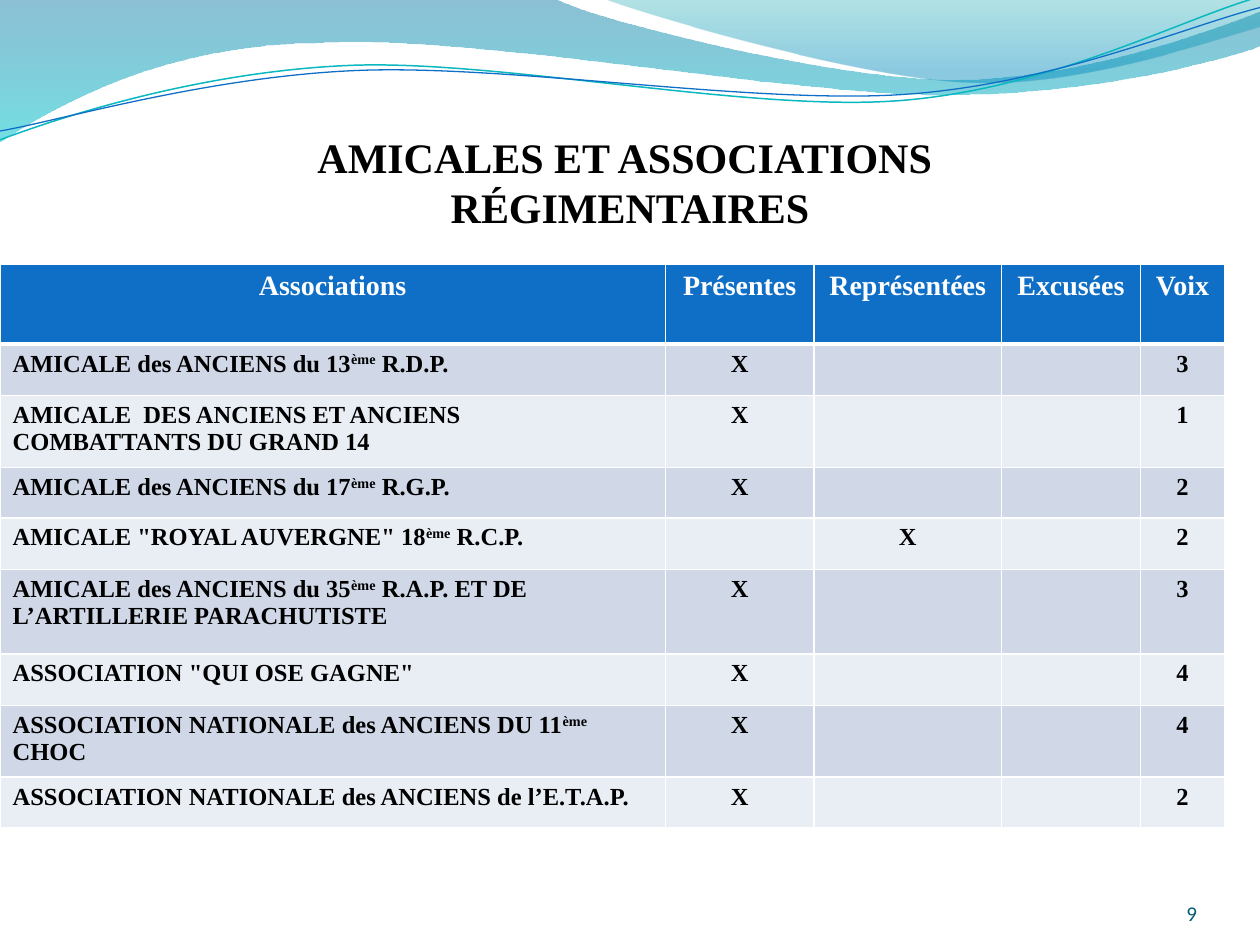
from dataclasses import dataclass

import pptx
import pptx.dml.color
import pptx.enum.text
import pptx.oxml
import pptx.oxml.ns
import pptx.util

EMU_PER_PX = 9144  # 100 px to the inch
SERIF = "Times New Roman"
COLORS = {
    "white": "FFFFFF", "black": "000000", "header": "0F6FC6",
    "odd_row": "D0D8E8", "even_row": "E9EDF4", "page_number": "045C75",
    "teal_line": "0AB8BF", "blue_line": "0F6FC6",
    "deep_blue": "0074A1", "aqua": "00C6CF", "teal": "00A1A9", "sky": "008BBF",
}
Point = tuple[int, int]
Curve = tuple[Point, Point, Point]
ALIGN = pptx.enum.text.PP_ALIGN


@dataclass
class GradientStop:
    position: float
    color: str
    opacity: int


@dataclass
class Wave:
    """Outline of straight points and Bézier curves, filled or stroked."""
    segments: list[Point | Curve]
    gradient: tuple[GradientStop, GradientStop] | None = None
    line_color: str = ""
    line_width: float = 0


@dataclass
class Association:
    name: str
    status: str
    votes: int


WAVES = [
    Wave([(0, -1), (440, -1), ((476, 17), (664, 63), (758, 63)),
          ((853, 63), (958, 26), (1000, 9)), (1001, 36),
          ((983, 44), (870, 76), (746, 75)), ((622, 75), (382, 28), (257, 34)),
          ((129, 35), (46, 83), (-1, 113))],
         gradient=(GradientStop(0, "deep_blue", 45), GradientStop(1, "aqua", 55))),
    Wave([(479, -1), ((509, 11), (682, 62), (769, 65)),
          ((856, 69), (961, 32), (1000, 21)), (1000, 0)],
         gradient=(GradientStop(0, "teal", 30), GradientStop(0.8, "sky", 45))),
    Wave([(0, 111), ((48, 93), (158, 57), (277, 52)),
          ((395, 47), (593, 89), (713, 80)), ((833, 71), (938, 15), (998, -2))],
         line_color="teal_line", line_width=0.85),
    Wave([(0, 104), ((47, 96), (164, 61), (283, 56)),
          ((403, 51), (597, 83), (717, 75)), ((836, 67), (941, 21), (1000, 6))],
         line_color="blue_line", line_width=0.75),
]
HEADERS = ["Associations", "Présentes", "Représentées", "Excusées", "Voix"]
COLUMN_WIDTHS = [528, 118, 149, 110, 67]
ROW_HEIGHTS = [63, 41, 57, 40, 41, 67, 41, 57, 40]
ASSOCIATIONS = [
    Association("AMICALE des ANCIENS du 13ème R.D.P.", "Présentes", 3),
    Association("AMICALE  DES ANCIENS ET ANCIENS COMBATTANTS DU GRAND 14", "Présentes", 1),
    Association("AMICALE des ANCIENS du 17ème R.G.P.", "Présentes", 2),
    Association('AMICALE "ROYAL AUVERGNE" 18ème R.C.P.', "Représentées", 2),
    Association("AMICALE des ANCIENS du 35ème R.A.P. ET DE L’ARTILLERIE PARACHUTISTE",
                "Présentes", 3),
    Association('ASSOCIATION "QUI OSE GAGNE"', "Présentes", 4),
    Association("ASSOCIATION NATIONALE des ANCIENS DU 11ème CHOC", "Présentes", 4),
    Association("ASSOCIATION NATIONALE des ANCIENS de l’E.T.A.P.", "Présentes", 2),
]


def px(length: int) -> int:
    return length * EMU_PER_PX


def rgb(name: str) -> pptx.dml.color.RGBColor:
    return pptx.dml.color.RGBColor.from_string(COLORS[name])


def format_run(run, size: int, color: str, font: str = SERIF, bold: bool = True) -> None:
    run.font.size = pptx.util.Pt(size)
    run.font.name = font
    run.font.bold = bold
    run.font.color.rgb = rgb(color)


def bend_segments(shape, segments: list[Point | Curve]) -> None:
    """Join the three straight steps of each curve into one Bézier curve."""
    steps = iter(list(shape._element.iter(pptx.oxml.ns.qn("a:lnTo"))))
    for segment in segments:
        first = next(steps)
        if len(segment) == 2:
            continue
        curve = pptx.oxml.parse_xml(f'<a:cubicBezTo {pptx.oxml.ns.nsdecls("a")}/>')
        first.addprevious(curve)
        for step in (first, next(steps), next(steps)):
            curve.append(step[0])
            step.getparent().remove(step)


def draw_wave(slide, wave: Wave) -> None:
    start, *segments = wave.segments
    vertices = []
    for segment in segments:
        points = segment if len(segment) == 3 else [segment]
        vertices += [(px(x), px(y)) for x, y in points]
    builder = slide.shapes.build_freeform(px(start[0]), px(start[1]), scale=1.0)
    builder.add_line_segments(vertices, close=wave.gradient is not None)
    shape = builder.convert_to_shape()
    bend_segments(shape, segments)
    shape.shadow.inherit = False
    if wave.gradient is None:
        shape.fill.background()
        shape.line.color.rgb = rgb(wave.line_color)
        shape.line.width = pptx.util.Pt(wave.line_width)
        return
    shape.line.fill.background()
    shape.fill.gradient()
    shape.fill.gradient_angle = 270
    for stop, wanted in zip(shape.fill.gradient_stops, wave.gradient):
        stop.position = wanted.position
        stop.color.rgb = rgb(wanted.color)
    color_elements = shape.fill._xPr.iter(pptx.oxml.ns.qn("a:srgbClr"))
    for element, wanted in zip(list(color_elements), wave.gradient):
        element.append(pptx.oxml.parse_xml(
            f'<a:alpha {pptx.oxml.ns.nsdecls("a")} val="{wanted.opacity * 1000}"/>'))


def style_cell(cell, fill: str, top: int, bottom: int) -> None:
    """Draw white borders of the given point widths, then the fill."""
    properties = cell._tc.get_or_add_tcPr()
    for side, width in (("L", 1), ("R", 1), ("T", top), ("B", bottom)):
        properties.append(pptx.oxml.parse_xml(
            f'<a:ln{side} {pptx.oxml.ns.nsdecls("a")} w="{pptx.util.Pt(width)}">'
            f'<a:solidFill><a:srgbClr val="{COLORS["white"]}"/></a:solidFill>'
            f'</a:ln{side}>'))
    cell.fill.solid()
    cell.fill.fore_color.rgb = rgb(fill)


def write_cell(cell, text: str, size: int, color: str, centered: bool) -> None:
    """Write the text, raising an ordinal ending."""
    paragraph = cell.text_frame.paragraphs[0]
    paragraph.alignment = ALIGN.CENTER if centered else ALIGN.LEFT
    for part in filter(None, text.partition("ème")):
        run = paragraph.add_run()
        run.text = part
        format_run(run, size, color)
        if part == "ème":
            run._r.get_or_add_rPr().set("baseline", "30000")
    if not text:  # keeps an empty cell from stretching its row
        paragraph._p.append(pptx.oxml.parse_xml(
            f'<a:endParaRPr {pptx.oxml.ns.nsdecls("a")} sz="{size * 100}"/>'))


def draw_table(slide) -> None:
    rows = [HEADERS]
    for association in ASSOCIATIONS:
        marks = ["X" if header == association.status else "" for header in HEADERS[1:-1]]
        rows.append([association.name, *marks, str(association.votes)])
    table = slide.shapes.add_table(len(rows), len(HEADERS), 0, px(210),
                                   px(sum(COLUMN_WIDTHS)), px(sum(ROW_HEIGHTS))).table
    table.first_row = table.horz_banding = False
    for column, width in zip(table.columns, COLUMN_WIDTHS):
        column.width = px(width)
    for row_index, texts in enumerate(rows):
        table.rows[row_index].height = px(ROW_HEIGHTS[row_index])
        is_header = row_index == 0
        fill = "header" if is_header else "odd_row" if row_index % 2 else "even_row"
        for column_index, text in enumerate(texts):
            cell = table.cell(row_index, column_index)
            style_cell(cell, fill, top=3 if row_index == 1 else 1,
                       bottom=3 if is_header else 1)
            write_cell(cell, text, 16 if is_header else 14,
                       "white" if is_header else "black",
                       centered=is_header or column_index > 0)


def write_title(slide) -> None:
    title = slide.shapes.title
    title.left, title.top, title.width, title.height = map(px, (35, 99, 930, 91))
    frame = title.text_frame
    frame.text = "AMICALES ET ASSOCIATIONS \nRÉGIMENTAIRES"
    frame.auto_size = pptx.enum.text.MSO_AUTO_SIZE.NONE
    frame.vertical_anchor = pptx.enum.text.MSO_ANCHOR.TOP
    for paragraph in frame.paragraphs:
        paragraph.alignment = ALIGN.CENTER
        format_run(paragraph.runs[0], 24, "black")


def write_page_number(slide) -> None:
    frame = slide.shapes.add_textbox(*map(px, (867, 695, 83, 40))).text_frame
    frame.text = "9"
    frame.word_wrap = True
    frame.vertical_anchor = pptx.enum.text.MSO_ANCHOR.BOTTOM
    frame.margin_left = frame.margin_top = frame.margin_right = frame.margin_bottom = 0
    paragraph = frame.paragraphs[0]
    paragraph.alignment = ALIGN.RIGHT
    format_run(paragraph.runs[0], 12, "page_number", font="Calibri", bold=False)


def main() -> None:
    presentation = pptx.Presentation()
    presentation.slide_width, presentation.slide_height = px(1000), px(750)
    slide = presentation.slides.add_slide(presentation.slide_layouts[5])
    for wave in WAVES:
        draw_wave(slide, wave)
    draw_table(slide)
    write_title(slide)
    write_page_number(slide)
    presentation.save("out.pptx")


if __name__ == "__main__":
    main()
